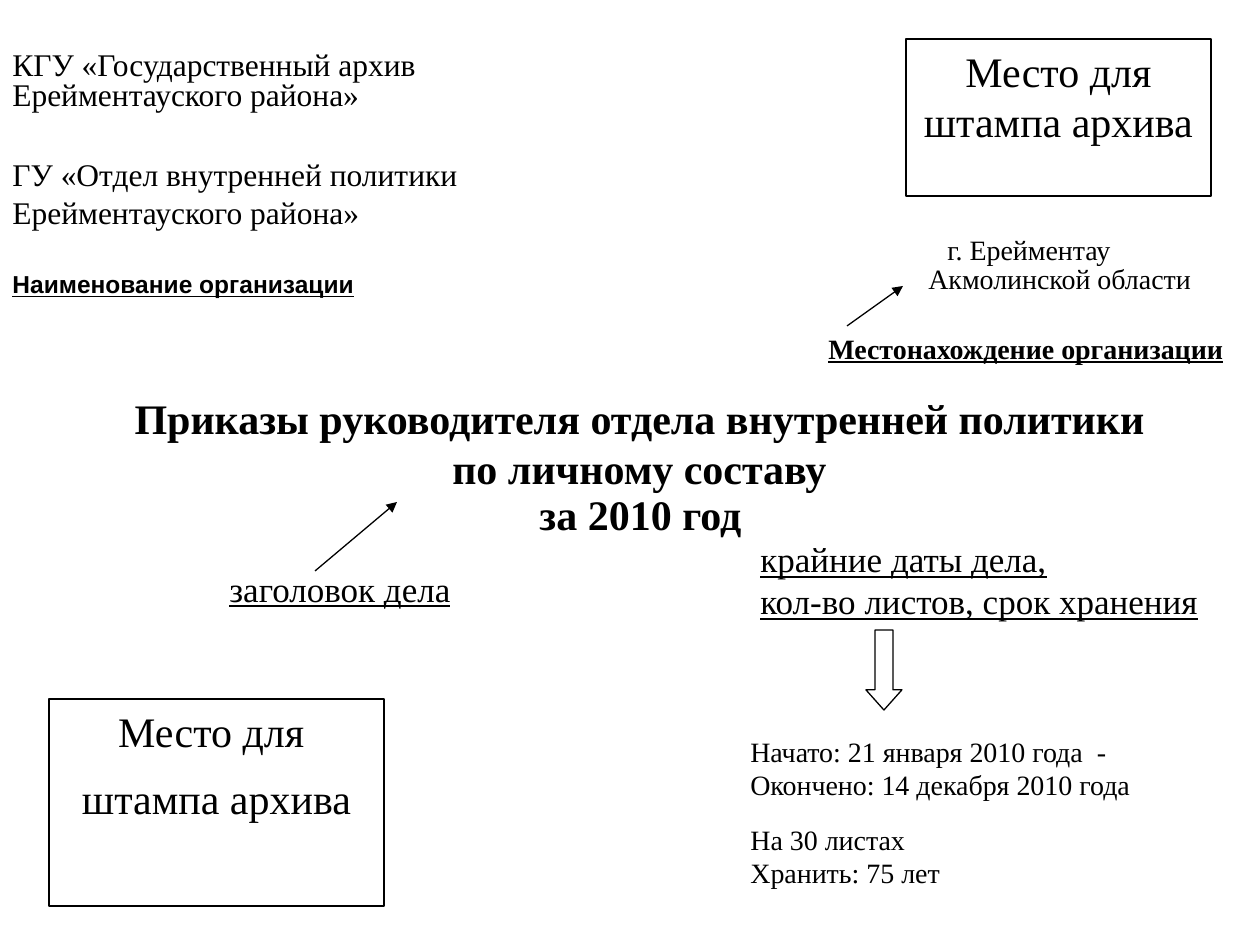
import pptx
import pptx.util
import pptx.oxml.ns
import lxml.etree
from pptx.dml.color import RGBColor
from pptx.enum.shapes import MSO_CONNECTOR, MSO_SHAPE
from pptx.enum.text import MSO_ANCHOR, MSO_AUTO_SIZE, PP_ALIGN

SCALE = 914400 / 126
COLORS = {"ink": "000000", "paper": "FFFFFF"}
SERIF = "Times New Roman"


def px(*nums):
    """Turn pixel lengths into EMU."""
    return [pptx.util.Emu(round(n * SCALE)) for n in nums]


def tint(name):
    """Look up a colour by name."""
    return RGBColor.from_string(COLORS[name])


def style(par, size, bold=False, under=False, font=SERIF):
    """Format all runs of a paragraph."""
    for run in par.runs:
        face = run.font
        face.name, face.size = font, pptx.util.Pt(size)
        face.bold, face.underline = bold, under
        face.color.rgb = tint("ink")


def write(shape, text, size, bold=False, under=False, align=PP_ALIGN.LEFT,
          pad=6, wrap=True):
    """Fill a shape with top-anchored lines of text."""
    frame = shape.text_frame
    frame.text = text
    frame.word_wrap = wrap
    frame.auto_size = MSO_AUTO_SIZE.NONE
    frame.vertical_anchor = MSO_ANCHOR.TOP
    frame.margin_top = px(pad)[0]
    for par in frame.paragraphs:
        par.alignment = align
        style(par, size, bold, under)
    return frame


def label(slide, box, text, size, **opts):
    """Add a text box."""
    return write(slide.shapes.add_textbox(*px(*box)), text, size, **opts)


def head(slide, box, text, size, **opts):
    """Place and format the title placeholder."""
    shape = slide.shapes.title
    shape.left, shape.top, shape.width, shape.height = px(*box)
    frame = write(shape, text, size, bold=True, align=PP_ALIGN.CENTER, **opts)
    for par in frame.paragraphs:
        par.line_spacing = 1.0
        par.space_before = pptx.util.Pt(0)


def block(slide, kind, box):
    """Add a white shape with a thin black outline."""
    shape = slide.shapes.add_shape(kind, *px(*box))
    shape.shadow.inherit = False
    shape.fill.solid()
    shape.fill.fore_color.rgb = tint("paper")
    shape.line.color.rgb = tint("ink")
    shape.line.width = pptx.util.Pt(0.75)
    return shape


def stamp(slide, box, text, gap=0):
    """Add a frame reserved for the archive stamp."""
    shape = block(slide, MSO_SHAPE.RECTANGLE, box)
    frame = write(shape, text, 24, align=PP_ALIGN.CENTER)
    for par in frame.paragraphs:
        par.space_after = pptx.util.Pt(gap)


def arrow(slide, ends):
    """Add a thin line with a triangle at its end."""
    line = slide.shapes.add_connector(MSO_CONNECTOR.STRAIGHT, *px(*ends))
    line.line.color.rgb = tint("ink")
    line.line.width = pptx.util.Pt(0.75)
    qn = pptx.oxml.ns.qn
    tail = lxml.etree.SubElement(line.line._get_or_add_ln(), qn("a:tailEnd"))
    tail.set("type", "triangle")
    lxml.etree.SubElement(line._element.spPr, qn("a:effectLst"))


def main():
    """Build the slide and save it."""
    deck = pptx.Presentation()
    deck.slide_width, deck.slide_height = px(1260, 945)
    slide = deck.slides.add_slide(deck.slide_layouts[5])

    stamp(slide, (906, 39, 305, 157), "Место для штампа архива")
    label(slide, (0, 0, 699, 204), "КГУ «Государственный архив", 18, pad=45)
    unit = label(slide, (0, 147, 483, 195),
                 "ГУ «Отдел внутренней политики\nЕрейментауского района»\n"
                 "Наименование организации", 18, pad=8, wrap=False)
    name = unit.paragraphs[-1]
    name.space_before = pptx.util.Pt(22)
    style(name, 14, True, True, "Arial")
    label(slide, (0, 69, 375, 50), "Ерейментауского района»", 18, wrap=False)

    arrow(slide, (847, 326, 903, 286))
    label(slide, (935, 227, 354, 84), "г. Ерейментау", 16)
    label(slide, (916, 256, 344, 84), "Акмолинской области", 16)
    label(slide, (816, 325, 571, 47), "Местонахождение организации", 16,
          bold=True, under=True)

    arrow(slide, (315, 571, 397, 502))
    label(slide, (217, 561, 571, 55), "заголовок дела", 20, under=True)
    label(slide, (748, 532, 473, 98),
          "крайние даты дела,\nкол-во листов, срок хранения", 20, under=True)
    down = block(slide, MSO_SHAPE.DOWN_ARROW, (866, 630, 36, 80))
    down.adjustments[0], down.adjustments[1] = 0.5, 0.56

    head(slide, (108, 384, 1063, 152),
         "Приказы руководителя отдела внутренней политики по личному составу",
         24, pad=8)
    label(slide, (217, 483, 847, 63), "за 2010 год", 24, bold=True,
          align=PP_ALIGN.CENTER)
    label(slide, (738, 728, 493, 81),
          "Начато: 21 января 2010 года  -\nОкончено: 14 декабря 2010 года", 16)
    label(slide, (738, 816, 423, 81), "На 30 листах\nХранить: 75 лет", 16)
    stamp(slide, (49, 699, 335, 207), "Место для \nштампа архива", 10)
    deck.save("out.pptx")


if __name__ == "__main__":
    main()
